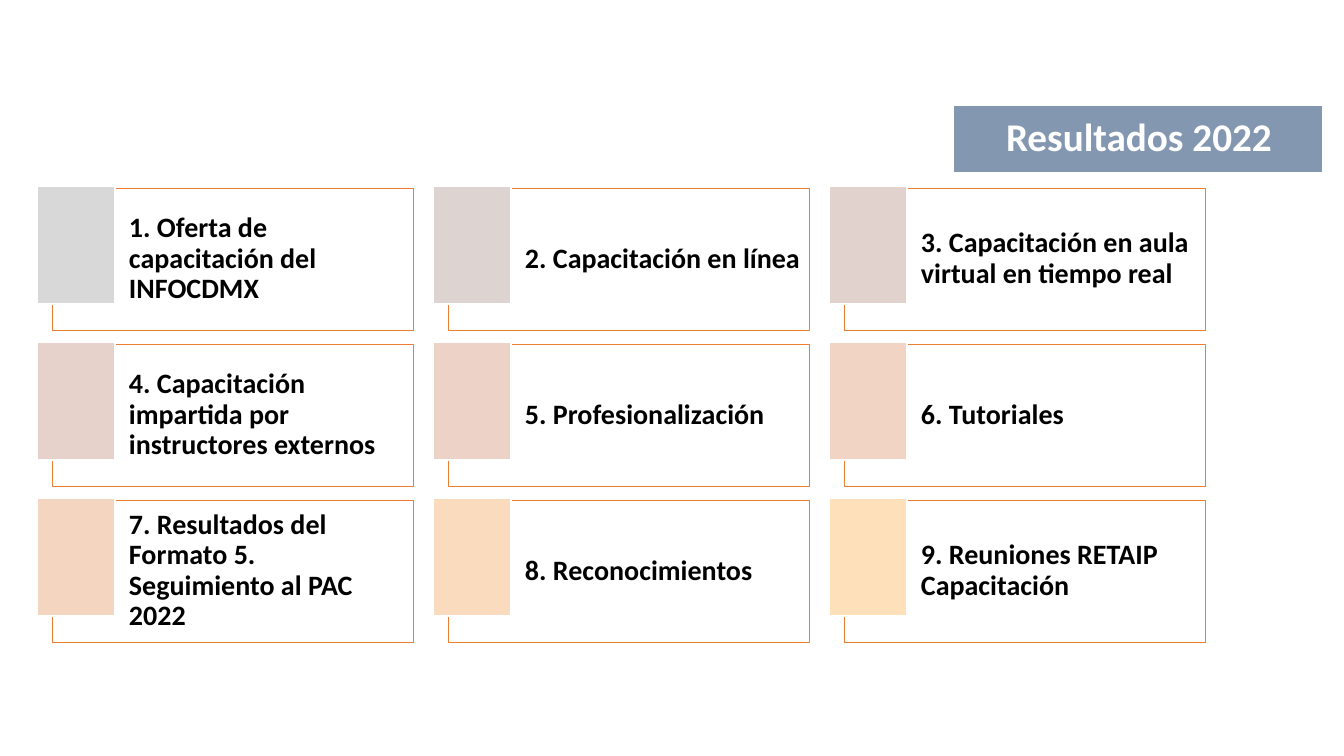
from lxml import etree
from pptx import Presentation
from pptx.dml.color import RGBColor
from pptx.enum.shapes import MSO_SHAPE
from pptx.enum.text import MSO_ANCHOR, MSO_AUTO_SIZE, PP_ALIGN
from pptx.oxml.ns import qn
from pptx.util import Emu, Pt

RECTANGLE = MSO_SHAPE.RECTANGLE
MIDDLE = MSO_ANCHOR.MIDDLE
LEFT = PP_ALIGN.LEFT
NO_AUTOFIT = MSO_AUTO_SIZE.NONE
PX = 914400 / 100.8
COLORS = {"white": "FFFFFF", "black": "000000", "border": "ED7D31", "banner": "8497B0"}
TITLE_ONLY = 5

COLUMNS = 3
CARD_LEFT, CARD_TOP, CARD_WIDTH, CARD_HEIGHT = 52, 188, 361, 142
COLUMN_STEP, ROW_STEP = 396, 156
TILE_WIDTH, TILE_HEIGHT = 78, 118

TOPICS = [
    ("1. Oferta de capacitación del INFOCDMX", "D8D8D8"),
    ("2. Capacitación en línea", "DDD4D2"),
    ("3. Capacitación en aula virtual en tiempo real", "E1D2CE"),
    ("4. Capacitación impartida por instructores externos", "E6D2CB"),
    ("5. Profesionalización", "EDD2C7"),
    ("6. Tutoriales", "F2D4C4"),
    ("7. Resultados del Formato 5. Seguimiento al PAC 2022", "F4D6C0"),
    ("8. Reconocimientos", "FADBBD"),
    ("9. Reuniones RETAIP Capacitación", "FEE0BA"),
]


def paint(shape, fill, line, line_width):
    shape.fill.solid()
    shape.fill.fore_color.rgb = RGBColor.from_string(fill)
    shape.line.color.rgb = RGBColor.from_string(line)
    shape.line.width = Pt(line_width)


def write(shape, text, size, color, left_inset):
    frame = shape.text_frame
    frame.word_wrap = True
    frame.auto_size = NO_AUTOFIT
    frame.vertical_anchor = MIDDLE
    frame.margin_left = Emu(round(left_inset * PX))
    frame.margin_top = frame.margin_right = frame.margin_bottom = Emu(round(6 * PX))
    para = frame.paragraphs[0]
    para.alignment = LEFT
    para.line_spacing = 0.9
    span = para.add_run()
    span.text = text
    span.font.name = "Calibri"
    span.font.size = Pt(size)
    span.font.bold = True
    span.font.color.rgb = RGBColor.from_string(color)


deck = Presentation()
deck.slide_width = Emu(round(1344 * PX))
deck.slide_height = Emu(round(756 * PX))
page = deck.slides.add_slide(deck.slide_layouts[TITLE_ONLY])

banner = page.shapes.title
banner.left, banner.top, banner.width, banner.height = (
    Emu(round(value * PX)) for value in (953, 105, 370, 68)
)
paint(banner, COLORS["banner"], COLORS["white"], 1)
write(banner, "Resultados 2022", 28, COLORS["white"], 53)

for index, (topic, tile_color) in enumerate(TOPICS):
    row, column = divmod(index, COLUMNS)
    left = CARD_LEFT + column * COLUMN_STEP
    top = CARD_TOP + row * ROW_STEP

    card_area = (left, top, CARD_WIDTH, CARD_HEIGHT)
    card = page.shapes.add_shape(RECTANGLE, *(Emu(round(value * PX)) for value in card_area))
    card.shadow.inherit = False
    paint(card, COLORS["white"], COLORS["border"], 0.5)
    fill_color = card.fill._xPr.find(qn("a:solidFill"))[0]
    etree.SubElement(fill_color, qn("a:alpha")).set("val", "40000")
    write(card, topic, 20, COLORS["black"], 77)

    tile_area = (left - 15, top - 2, TILE_WIDTH, TILE_HEIGHT)
    tile = page.shapes.add_shape(RECTANGLE, *(Emu(round(value * PX)) for value in tile_area))
    tile.shadow.inherit = False
    paint(tile, tile_color, COLORS["white"], 1)

deck.save("out.pptx")
